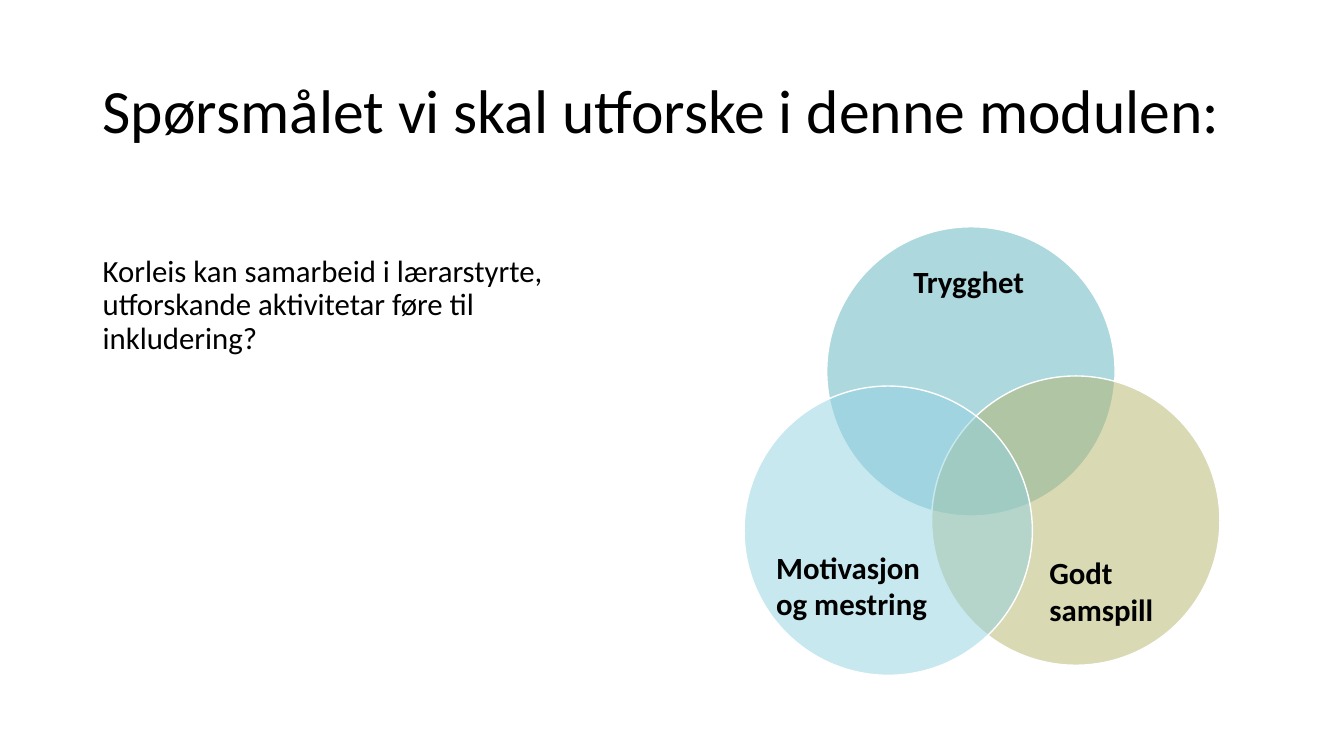
"""Build a slide with a question and three overlapping circles."""
from lxml import etree
from pptx import Presentation
from pptx.dml.color import RGBColor
from pptx.enum.shapes import MSO_SHAPE
from pptx.enum.text import MSO_ANCHOR, MSO_AUTO_SIZE
from pptx.oxml.ns import qn
from pptx.util import Inches, Pt

OVAL = MSO_SHAPE.OVAL
TOP, MIDDLE = MSO_ANCHOR.TOP, MSO_ANCHOR.MIDDLE
NO_FIT, GROW = MSO_AUTO_SIZE.NONE, MSO_AUTO_SIZE.SHAPE_TO_FIT_TEXT
BLACK = RGBColor(0x00, 0x00, 0x00)
WHITE = RGBColor(0xFF, 0xFF, 0xFF)
TEAL = RGBColor(0x5D, 0xB2, 0xBD)
OLIVE = RGBColor(0xB4, 0xB4, 0x6B)
SKY = RGBColor(0x92, 0xD2, 0xE3)
FONT = "Calibri"
ALPHA = "50000"

TITLE = "Spørsmålet vi skal utforske i denne modulen:"
QUERY = "Korleis kan samarbeid i lærarstyrte, utforskande aktivitetar føre til inkludering?"
WIDE, HIGH = 2.86, 2.87
RINGS = [(8.2, 2.25, TEAL), (9.24, 3.73, OLIVE), (7.38, 3.83, SKY)]
LABELS = [
    ("Trygghet", (8.96, 2.56, 1.57, 0.47)),
    ("Motivasjon og mestring", (7.6, 5.39, 1.72, 0.84)),
    ("Godt samspill", (10.31, 5.44, 1.57, 0.84)),
]


def add_ring(slide, left, top, color):
    ring = slide.shapes.add_shape(OVAL, Inches(left), Inches(top), Inches(WIDE), Inches(HIGH))
    ring.shadow.inherit = False
    ring.fill.solid()
    ring.fill.fore_color.rgb = color
    tint = ring.fill._xPr.find(qn("a:solidFill"))[0]
    etree.SubElement(tint, qn("a:alpha"), val=ALPHA)
    ring.line.color.rgb = WHITE
    ring.line.width = Pt(1)


def add_text(slide, text, box, size=22, bold=False, anchor=TOP, fit=NO_FIT, space=1.0, before=0):
    frame = slide.shapes.add_textbox(*map(Inches, box)).text_frame
    frame.word_wrap = True
    frame.auto_size = fit
    frame.vertical_anchor = anchor
    para = frame.paragraphs[0]
    para.line_spacing = space
    para.space_before = Pt(before)
    run = para.add_run()
    run.text = text
    run.font.name = FONT
    run.font.size = Pt(size)
    run.font.bold = bold
    run.font.color.rgb = BLACK


def main():
    deck = Presentation()
    deck.slide_width, deck.slide_height = Inches(13.33), Inches(7.5)
    slide = deck.slides.add_slide(deck.slide_layouts[6])
    add_text(slide, TITLE, (0.92, 0.4, 11.5, 1.45), size=44, anchor=MIDDLE, space=0.9)
    add_text(slide, QUERY, (0.92, 2.49, 5.04, 4.21), space=0.9, before=10)
    for left, top, color in RINGS:
        add_ring(slide, left, top, color)
    for text, box in LABELS:
        add_text(slide, text, box, bold=True, fit=GROW)
    deck.save("out.pptx")


if __name__ == "__main__":
    main()
